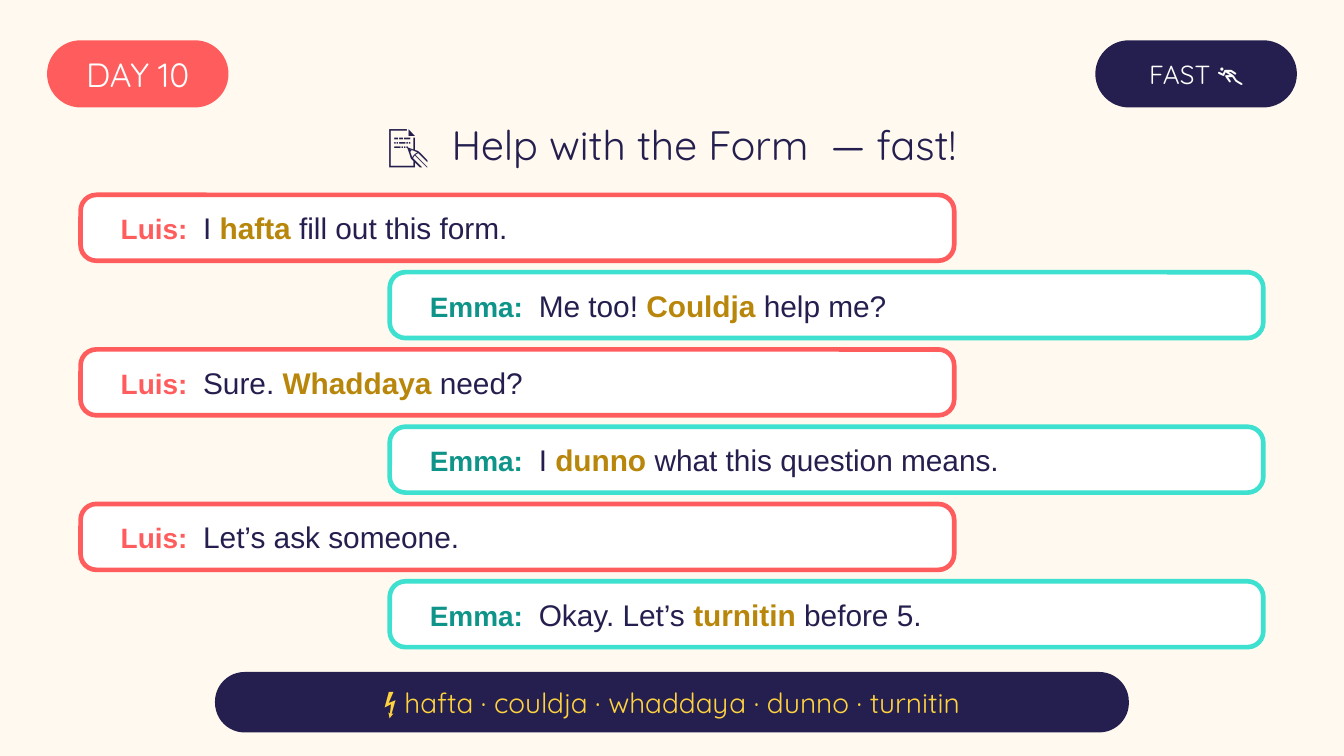
from pptx import Presentation
from pptx import util as u
from pptx.dml import color
from pptx.enum import shapes, text

EMU_PER_PX = 4572  # 200 px to the inch

CREAM, WHITE, NAVY = "FFF9EF", "FFFFFF", "241F4E"
CORAL, TURQUOISE, TEAL = "FF5D5D", "3EE0CF", "0E9488"
GOLD, YELLOW = "B8860B", "FFD23F"
BODY_FONT, DISPLAY_FONT = "Arial", "Quicksand"

# Speaker: left edge, border colour, name colour
SPEAKERS = {
    "Luis": (120, CORAL, CORAL),
    "Emma": (580, TURQUOISE, TEAL),
}

# Speaker, words before the reduced form, reduced form, words after it
DIALOGUE = [
    ("Luis", "I ", "hafta", " fill out this form."),
    ("Emma", "Me too! ", "Couldja", " help me?"),
    ("Luis", "Sure. ", "Whaddaya", " need?"),
    ("Emma", "I ", "dunno", " what this question means."),
    ("Luis", "Let’s ask someone.", "", ""),
    ("Emma", "Okay. Let’s ", "turnitin", " before 5."),
]
FIRST_TOP, ROW_STEP = 290, 115
BUBBLE_WIDTH, BUBBLE_HEIGHT, BUBBLE_PADDING = 1300, 98, 40


def px(length):
    return u.Emu(length * EMU_PER_PX)


def box(*lengths):
    return [px(length) for length in lengths]


def rgb(value):
    return color.RGBColor.from_string(value)


def format_run(run, size, colour, font=DISPLAY_FONT, bold=False):
    run.font.size = u.Pt(size)
    run.font.name = font
    run.font.bold = bold
    run.font.color.rgb = rgb(colour)


def prepare_frame(frame, inset_x=20, inset_y=10):
    frame.word_wrap = True
    frame.auto_size = text.MSO_AUTO_SIZE.NONE
    frame.vertical_anchor = text.MSO_ANCHOR.MIDDLE
    frame.margin_left = frame.margin_right = px(inset_x)
    frame.margin_top = frame.margin_bottom = px(inset_y)


def set_centred_text(frame, words, size, colour):
    frame.text = words
    paragraph = frame.paragraphs[0]
    paragraph.alignment = text.PP_ALIGN.CENTER
    format_run(paragraph.runs[0], size, colour)


def add_rounded_box(slide, place, fill, corner, line=None):
    shape = slide.shapes.add_shape(
        shapes.MSO_SHAPE.ROUNDED_RECTANGLE, *box(*place))
    shape.shadow.inherit = False
    shape.adjustments[0] = corner
    shape.fill.solid()
    shape.fill.fore_color.rgb = rgb(fill)
    if line:
        shape.line.color.rgb = rgb(line)
        shape.line.width = u.Pt(2.5)
    else:
        shape.line.fill.background()


def add_pill(slide, place, fill, words, size, colour):
    add_rounded_box(slide, place, fill, 0.49 if place[3] < 100 else 0.5)
    frame = slide.shapes.add_textbox(*box(*place)).text_frame
    prepare_frame(frame, 0, 0)
    set_centred_text(frame, words, size, colour)


def add_title(slide, words):
    title = slide.shapes.title
    title.left, title.top, title.width, title.height = box(0, 164, 2000, 100)
    prepare_frame(title.text_frame)
    set_centred_text(title.text_frame, words, 22, NAVY)


def add_bubble(slide, top, speaker, before, reduced, after):
    left, border, name_colour = SPEAKERS[speaker]
    add_rounded_box(slide, (left, top, BUBBLE_WIDTH, BUBBLE_HEIGHT),
                    WHITE, 0.24, border)
    text_box = slide.shapes.add_textbox(*box(
        left + BUBBLE_PADDING, top,
        BUBBLE_WIDTH - 2 * BUBBLE_PADDING, BUBBLE_HEIGHT))
    prepare_frame(text_box.text_frame)
    paragraph = text_box.text_frame.paragraphs[0]
    parts = [
        (f"{speaker}:  ", 15, name_colour, True),
        (before, 16, NAVY, False),
        (reduced, 16, GOLD, True),
        (after, 16, NAVY, False),
    ]
    for words, size, colour, bold in parts:
        if words:
            run = paragraph.add_run()
            run.text = words
            format_run(run, size, colour, BODY_FONT, bold)


def main():
    presentation = Presentation()
    presentation.slide_width, presentation.slide_height = box(2000, 1125)
    slide = presentation.slides.add_slide(presentation.slide_layouts[5])
    slide.background.fill.solid()
    slide.background.fill.fore_color.rgb = rgb(CREAM)

    # Header
    add_pill(slide, (70, 60, 270, 100), CORAL, "DAY 10", 18, WHITE)
    add_pill(slide, (1630, 60, 300, 100), NAVY, "FAST 🏃", 14, WHITE)
    add_title(slide, "📝  Help with the Form  — fast!")

    # Dialogue
    for row, line in enumerate(DIALOGUE):
        add_bubble(slide, FIRST_TOP + row * ROW_STEP, *line)

    # Summary of reduced forms
    add_pill(slide, (320, 1000, 1360, 90), NAVY,
             "⚡ hafta · couldja · whaddaya · dunno · turnitin", 15, YELLOW)

    presentation.save("out.pptx")


if __name__ == "__main__":
    main()
